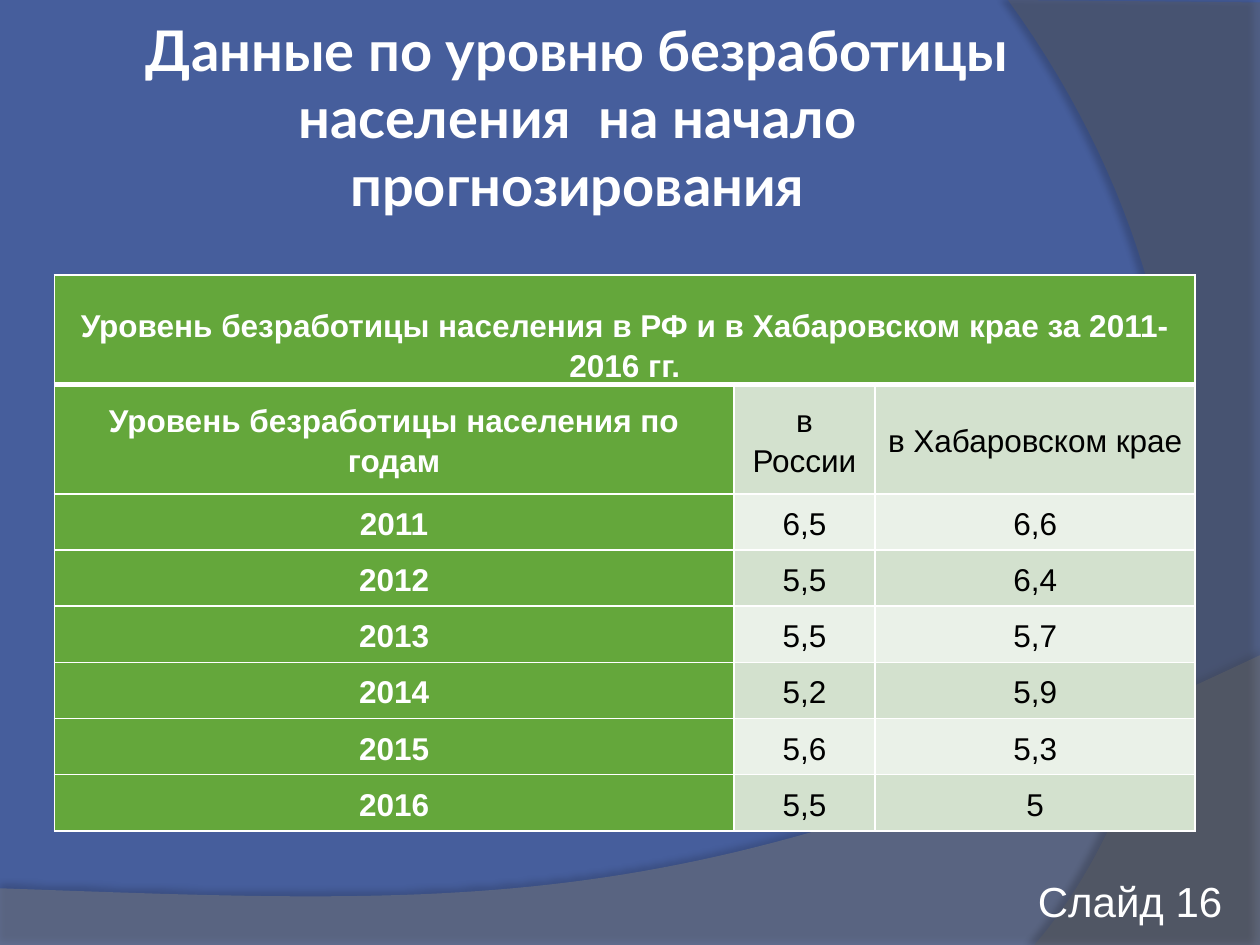
"""Build the slide with the unemployment table for Russia and Khabarovsk Krai."""
from dataclasses import dataclass

from lxml import etree
from pptx import Presentation
from pptx.dml.color import RGBColor
from pptx.enum import text
from pptx.oxml import ns, parse_xml
from pptx.util import Pt

Point = tuple[float, float]


@dataclass(frozen=True)
class Theme:
    background: str = "465E9C"
    white: str = "FFFFFF"
    black: str = "000000"
    green: str = "64A73B"
    bands: tuple[str, str] = ("D3E1CE", "EAF1E8")
    title_font: str = "Lato"
    body_font: str = "Arial"
    title_size: float = 32
    body_size: float = 18
    number_size: float = 24


@dataclass(frozen=True)
class Wave:
    corners: tuple[Point, ...]
    curve: tuple[Point, Point, Point]
    color: str
    opacity: int
    shadow_opacity: int
    shadow_distance: float
    shadow_angle: int


THEME = Theme()
WAVES = (
    Wave(((0, 507.6), (0, 540.72), (720, 540.72), (720, 374.4)),
         ((402.48, 524.88), (281.52, 517.68), (0, 507.6)), "7F7F7F", 45, 35, 3.5, 270),
    Wave(((720, 1.44), (720, 540), (591.12, 540)),
         ((673.2, 445.68), (732.96, 216), (576, 0)), "5E5E5E", 40, 45, 4, 180),
)
TITLE = "Данные по уровню безработицы населения  на начало прогнозирования"
ROWS = (
    ("Уровень безработицы населения в РФ и в Хабаровском крае за 2011-2016 гг.", "", ""),
    ("Уровень безработицы населения по годам", "в России", "в Хабаровском крае"),
    ("2011", "6,5", "6,6"),
    ("2012", "5,5", "6,4"),
    ("2013", "5,5", "5,7"),
    ("2014", "5,2", "5,9"),
    ("2015", "5,6", "5,3"),
    ("2016", "5,5", "5"),
)
COLUMN_WIDTHS = (388.3, 80.8, 182.9)
HEADER_HEIGHT, YEAR_HEIGHT = 62.6, 32.1
HEADER_COUNT = 2


def bezier(start: Point, curve: tuple[Point, Point, Point], steps: int = 60) -> list[Point]:
    """Return points along a cubic curve, without its start."""
    points = (start, *curve)
    result = []
    for step in range(1, steps + 1):
        t = step / steps
        weights = ((1 - t) ** 3, 3 * t * (1 - t) ** 2, 3 * t ** 2 * (1 - t), t ** 3)
        result.append(tuple(sum(w * p[axis] for w, p in zip(weights, points)) for axis in (0, 1)))
    return result


def draw_wave(page, wave: Wave) -> None:
    """Draw a translucent background wave with a soft shadow."""
    units = 100
    outline = [*wave.corners, *bezier(wave.corners[-1], wave.curve)]
    scaled = [(x * units, y * units) for x, y in outline]
    builder = page.shapes.build_freeform(*scaled[0], scale=Pt(1) / units)
    builder.add_line_segments(scaled[1:], close=True)
    shape = builder.convert_to_shape()
    shape.fill.solid()
    shape.fill.fore_color.rgb = RGBColor.from_string(wave.color)
    shape.line.fill.background()
    shape.shadow.inherit = False
    properties = shape._element.spPr
    color = properties.find(".//" + ns.qn("a:srgbClr"))
    etree.SubElement(color, ns.qn("a:alpha"), val=str(wave.opacity * 1000))
    effects = properties.find(ns.qn("a:effectLst"))
    effects.append(parse_xml(
        f'<a:outerShdw {ns.nsdecls("a")} blurRad="{Pt(4)}" dist="{Pt(wave.shadow_distance)}" '
        f'dir="{wave.shadow_angle * 60000}" algn="ctr" rotWithShape="0">'
        f'<a:srgbClr val="{THEME.black}"><a:alpha val="{wave.shadow_opacity * 1000}"/></a:srgbClr>'
        "</a:outerShdw>"))


def set_text(frame, words: str, font: str, size: float, color: str, bold: bool,
             align=text.PP_ALIGN.CENTER):
    """Write and format one paragraph, and return it."""
    frame.word_wrap = True
    para = frame.paragraphs[0]
    para.text = words
    para.alignment = align
    para.font.name = font
    para.font.size = Pt(size)
    para.font.bold = bold
    para.font.color.rgb = RGBColor.from_string(color)
    return para


def place(shape, left: float, top: float, width: float, height: float) -> None:
    """Set the position and size of a shape in points."""
    shape.left, shape.top, shape.width, shape.height = map(Pt, (left, top, width, height))


def draw_title(page) -> None:
    """Fill the title placeholder and bring it in front of the waves."""
    title = page.shapes.title
    place(title, 36, 21.6, 588.2, 90)
    frame = title.text_frame
    frame.auto_size = text.MSO_AUTO_SIZE.NONE
    frame.vertical_anchor = text.MSO_ANCHOR.MIDDLE
    frame.margin_left = frame.margin_right = frame.margin_top = frame.margin_bottom = Pt(3.6)
    para = set_text(frame, TITLE, THEME.title_font, THEME.title_size, THEME.white, True)
    para.line_spacing = 1.0
    para.space_before = Pt(0)
    title._element.getparent().append(title._element)


def set_borders(cell, top: float, bottom: float) -> None:
    """Draw white borders around a cell."""
    properties = cell._tc.get_or_add_tcPr()
    widths = {"lnL": 1, "lnR": 1, "lnT": top, "lnB": bottom}
    for index, (side, width) in enumerate(widths.items()):
        properties.insert(index, parse_xml(
            f'<a:{side} {ns.nsdecls("a")} w="{Pt(width)}"><a:solidFill>'
            f'<a:srgbClr val="{THEME.white}"/></a:solidFill></a:{side}>'))


def format_cell(cell, words: str, row: int, column: int) -> None:
    """Write a table cell and give it the look of its row and column."""
    is_heading = row == 0 or column == 0
    cell.fill.solid()
    fill = THEME.green if is_heading else THEME.bands[(row - 1) % 2]
    cell.fill.fore_color.rgb = RGBColor.from_string(fill)
    cell.vertical_anchor = text.MSO_ANCHOR.MIDDLE if row else text.MSO_ANCHOR.BOTTOM
    cell.margin_left = cell.margin_right = Pt(5)
    cell.margin_top = cell.margin_bottom = Pt(0)
    color = THEME.white if is_heading else THEME.black
    para = set_text(cell.text_frame, words, THEME.body_font, THEME.body_size, color, is_heading)
    para.line_spacing = 1.15
    set_borders(cell, top=3 if row == 1 else 1, bottom=3 if row == 0 else 1)


def draw_table(page) -> None:
    """Draw the table of unemployment rates by year."""
    heights = [HEADER_HEIGHT if row < HEADER_COUNT else YEAR_HEIGHT for row in range(len(ROWS))]
    frame = page.shapes.add_table(len(ROWS), len(COLUMN_WIDTHS), Pt(31), Pt(157),
                                  Pt(sum(COLUMN_WIDTHS)), Pt(sum(heights)))
    table = frame.table
    table.first_row = table.horz_banding = False
    for column, width in zip(table.columns, COLUMN_WIDTHS):
        column.width = Pt(width)
    for index, (words, height) in enumerate(zip(ROWS, heights)):
        table.rows[index].height = Pt(height)
        for column, entry in enumerate(words):
            format_cell(table.cell(index, column), entry, index, column)
    table.cell(0, 0).merge(table.cell(0, len(COLUMN_WIDTHS) - 1))


def draw_number(page) -> None:
    """Write the slide number in the lower right corner."""
    box = page.shapes.add_textbox(Pt(563.8), Pt(496.8), Pt(141.8), Pt(36))
    set_text(box.text_frame, "Слайд 16", THEME.body_font, THEME.number_size, THEME.white, False,
             text.PP_ALIGN.RIGHT)
    box.text_frame.auto_size = text.MSO_AUTO_SIZE.SHAPE_TO_FIT_TEXT


def main() -> None:
    """Build and save the deck."""
    deck = Presentation()
    deck.slide_width, deck.slide_height = Pt(720), Pt(540)
    page = deck.slides.add_slide(deck.slide_layouts[5])
    page.background.fill.solid()
    page.background.fill.fore_color.rgb = RGBColor.from_string(THEME.background)
    for wave in WAVES:
        draw_wave(page, wave)
    draw_title(page)
    draw_table(page)
    draw_number(page)
    deck.save("out.pptx")


if __name__ == "__main__":
    main()
